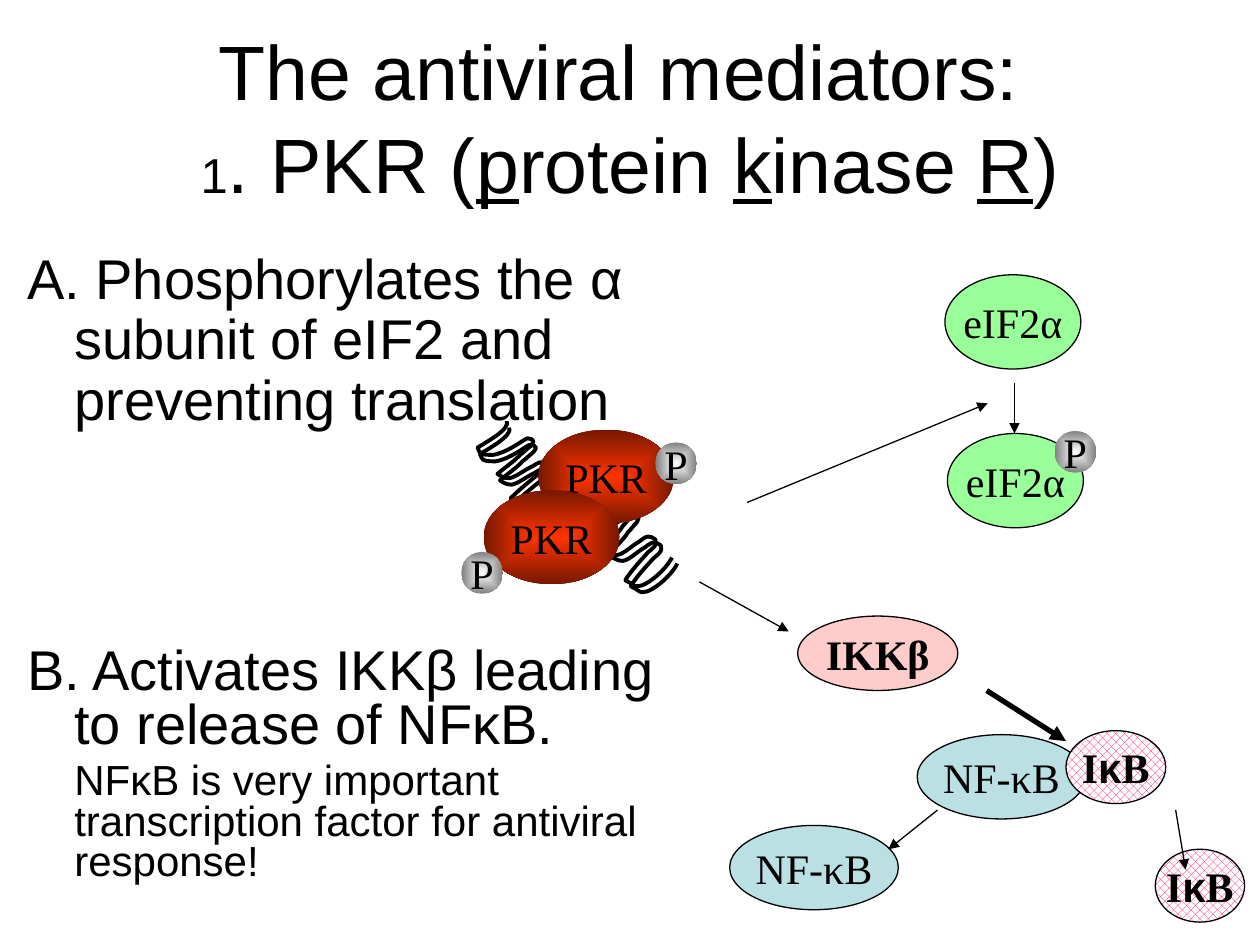
import math

import pptx
import pptx.dml.color
import pptx.enum.dml
import pptx.enum.shapes
import pptx.enum.text
import pptx.oxml
import pptx.oxml.ns
import pptx.util

Cm, Pt = pptx.util.Cm, pptx.util.Pt
qn = pptx.oxml.ns.qn
A_NS = 'xmlns:a="http://schemas.openxmlformats.org/drawingml/2006/main"'

GREEN, BLUE, PINK = "99FF99", "BBE0E3", "FFCCCC"
RED_GLOW = ("FF3300", "761800")
GREY_GLOW = ("FFFFFF", "808080")
PROTEIN = (2.74, 1.9)
PHOSPHATE = (0.84, 0.84)
NFKB = (3.4, 1.7)

# RNA strand: start point, then three points for each Bézier curve
STRAND_TILT = 237
STRAND = [
    (444, 384),
    (439, 391), (421, 404), (414, 404), (411, 404), (410, 402), (408, 401),
    (407, 401), (406, 400), (406, 400), (413, 394), (420, 388), (428, 382),
    (430, 380), (435, 377), (435, 376), (435, 375), (435, 374), (435, 373),
    (433, 372), (433, 371), (431, 371), (429, 371), (423, 375), (423, 375),
    (417, 378), (411, 383), (405, 384), (401, 385), (396, 381), (396, 381),
    (402, 376), (409, 371), (415, 365), (417, 363), (419, 361), (422, 359),
    (423, 358), (425, 355), (425, 355), (424, 353), (423, 352), (421, 352),
    (420, 352), (418, 353), (417, 354), (412, 357), (407, 360), (402, 363),
    (397, 365), (393, 366), (390, 365), (383, 365), (382, 365), (381, 360),
    (387, 356), (407, 345), (404, 339),
]


def color(hex_code):
    return pptx.dml.color.RGBColor.from_string(hex_code)


def turn(point, degrees):
    angle = math.radians(degrees)
    x, y = point
    return (x * math.cos(angle) - y * math.sin(angle),
            x * math.sin(angle) + y * math.cos(angle))


class Painter:
    """Holds the text and line style and the page being drawn on."""

    ink = "000000"
    sans = "Arial"
    serif = "Times New Roman"
    label_size = 24

    def __init__(self, page):
        self.page = page

    def set_font(self, font, name, size, bold=False):
        font.name, font.size, font.bold = name, Pt(size), bold
        font.color.rgb = color(self.ink)

    def set_line(self, line, width):
        line.color.rgb = color(self.ink)
        line.width = Pt(width)

    def text_box(self, left, top, width, height):
        box = self.page.shapes.add_textbox(Cm(left), Cm(top), Cm(width), Cm(height))
        box.text_frame.word_wrap = True
        return box.text_frame

    def title(self, left, top, width, height, lines):
        """Each line is a list of (text, size, underlined)."""
        frame = self.text_box(left, top, width, height)
        frame.vertical_anchor = pptx.enum.text.MSO_ANCHOR.MIDDLE
        para = frame.paragraphs[0]
        para.alignment = pptx.enum.text.PP_ALIGN.CENTER
        for index, line in enumerate(lines):
            if index:
                para.add_line_break()
            for text, size, underlined in line:
                span = para.add_run()
                span.text = text
                self.set_font(span.font, self.sans, size)
                span.font.underline = underlined

    def body(self, left, top, width, height, spacing, items):
        """Each item is (text, size, first-line indent)."""
        frame = self.text_box(left, top, width, height)
        for index, (text, size, indent) in enumerate(items):
            para = frame.add_paragraph() if index else frame.paragraphs[0]
            para.text = text
            para.line_spacing = spacing
            para.space_before = Pt(size * 0.2)
            self.set_font(para.font, self.sans, size)
            properties = para._p.get_or_add_pPr()
            properties.set("marL", str(Cm(0.95)))
            properties.set("indent", str(Cm(indent)))

    def oval(self, left, top, size, spans, bold=False):
        """Spans are (text, font name); the caller fills the shape returned."""
        shape = self.page.shapes.add_shape(
            pptx.enum.shapes.MSO_SHAPE.OVAL, Cm(left), Cm(top), *map(Cm, size))
        shape.shadow.inherit = False
        self.set_line(shape.line, 0.75)
        frame = shape.text_frame
        frame.word_wrap = False
        frame.vertical_anchor = pptx.enum.text.MSO_ANCHOR.MIDDLE
        para = frame.paragraphs[0]
        para.alignment = pptx.enum.text.PP_ALIGN.CENTER
        for text, name in spans:
            span = para.add_run()
            span.text = text
            self.set_font(span.font, name, self.label_size, bold)
        return shape

    def plain_oval(self, left, top, size, text, fill, bold=False):
        shape = self.oval(left, top, size, [(text, self.serif)], bold)
        shape.fill.solid()
        shape.fill.fore_color.rgb = color(fill)

    def glowing_oval(self, left, top, size, text, glow):
        shape = self.oval(left, top, size, [(text, self.serif)])
        shape.line.fill.background()
        shape.fill.gradient()
        for stop, position, shade in zip(shape.fill.gradient_stops, (0, 1), glow):
            stop.position = position
            stop.color.rgb = color(shade)
        gradient = shape._element.spPr.find(qn("a:gradFill"))
        gradient.replace(gradient.find(qn("a:lin")), pptx.oxml.parse_xml(
            f'<a:path {A_NS} path="shape">'
            '<a:fillToRect l="50000" t="50000" r="50000" b="50000"/></a:path>'))

    def inhibitor(self, left, top, size):
        spans = [("I", self.serif), ("κ", self.sans), ("B", self.serif)]
        shape = self.oval(left, top, size, spans, bold=True)
        shape.fill.patterned()
        shape.fill.pattern = pptx.enum.dml.MSO_PATTERN.PERCENT_50
        shape.fill.fore_color.rgb = color("FF0066")
        shape.fill.back_color.rgb = color("FFFFFF")

    def arrow(self, start_x, start_y, end_x, end_y, width=0.75):
        arrow = self.page.shapes.add_connector(
            pptx.enum.shapes.MSO_CONNECTOR.STRAIGHT,
            Cm(start_x), Cm(start_y), Cm(end_x), Cm(end_y))
        self.set_line(arrow.line, width)
        arrow.line._get_or_add_ln().append(
            pptx.oxml.parse_xml(f'<a:tailEnd {A_NS} type="triangle"/>'))
        arrow._element.spPr.append(pptx.oxml.parse_xml(f"<a:effectLst {A_NS}/>"))

    def strand(self, left, top, width, height, rotation):
        points = [turn(point, -STRAND_TILT) for point in STRAND]
        builder = self.page.shapes.build_freeform(*points[0], scale=Cm(1) / 100)
        builder.add_line_segments(points[1:], close=False)
        shape = builder.convert_to_shape()
        shape.left, shape.top = Cm(left), Cm(top)
        shape.width, shape.height = Cm(width), Cm(height)
        shape.rotation = rotation
        shape.shadow.inherit = False
        shape.fill.background()
        self.set_line(shape.line, 2.25)
        # Each three straight segments become one Bézier curve
        segments = list(shape._element.iter(qn("a:lnTo")))
        for first, second, third in zip(*[iter(segments)] * 3):
            curve = pptx.oxml.parse_xml(f"<a:cubicBezTo {A_NS}/>")
            first.addprevious(curve)
            for segment in (first, second, third):
                curve.append(segment[0])
                segment.getparent().remove(segment)


def main():
    deck = pptx.Presentation()
    deck.slide_width, deck.slide_height = Cm(25.4), Cm(19.05)
    painter = Painter(deck.slides.add_slide(deck.slide_layouts[6]))

    painter.title(1.9, 0.53, 21.59, 3.63, [
        [("The antiviral mediators: ", 44, False)],
        [("1", 28, False), (". PKR (", 44, False), ("p", 44, True),
         ("rotein ", 44, False), ("k", 44, True), ("inase ", 44, False),
         ("R", 44, True), (")", 44, False)],
    ])
    painter.body(0.3, 4.93, 13.59, 3.81, 0.9, [
        ("A. Phosphorylates the α subunit of eIF2 and preventing translation", 32, -0.95),
    ])

    painter.arrow(15.06, 10.13, 19.91, 8.13)
    painter.plain_oval(19.05, 5.54, PROTEIN, "eIF2α", GREEN)
    painter.plain_oval(19.1, 8.74, PROTEIN, "eIF2α", GREEN)
    painter.glowing_oval(21.26, 8.69, PHOSPHATE, "P", GREY_GLOW)
    painter.arrow(20.45, 7.72, 20.45, 8.74)

    for left, top, width, rotation in [
            (9.65, 8.94, 1.63, 237), (9.6, 8.81, 1.63, 237),
            (11.51, 10.41, 2.24, 230.6), (11.4, 10.29, 2.24, 230.6)]:
        painter.strand(left, top, width, 1.04, rotation)
    for pkr, phosphate in [((10.85, 8.66), (13.21, 8.92)),
                           ((9.75, 9.88), (9.3, 11.13))]:
        painter.glowing_oval(*pkr, PROTEIN, "PKR", RED_GLOW)
        painter.glowing_oval(*phosphate, PHOSPHATE, "P", GREY_GLOW)

    painter.plain_oval(18.49, 14.81, NFKB, "NF-κB", BLUE)
    painter.inhibitor(21.49, 14.73, (2.01, 1.47))
    painter.arrow(19.89, 13.92, 21.49, 14.94, width=3)
    painter.plain_oval(14.71, 16.64, NFKB, "NF-κB", BLUE)
    painter.inhibitor(23.29, 17.12, (1.8, 1.47))
    painter.arrow(23.7, 16.33, 23.9, 17.53)
    painter.arrow(18.9, 16.33, 17.91, 17.12)

    painter.body(0.3, 12.93, 13.59, 6.12, 0.8, [
        ("B. Activates IKKβ leading to release of NFκB.", 32, -0.95),
        ("NFκB is very important transcription factor for antiviral response!", 24, 0),
    ])
    painter.arrow(14.1, 11.73, 15.9, 12.73)
    painter.plain_oval(16.08, 12.42, (3.23, 1.5), "IKKβ", PINK, bold=True)

    deck.save("out.pptx")


if __name__ == "__main__":
    main()
